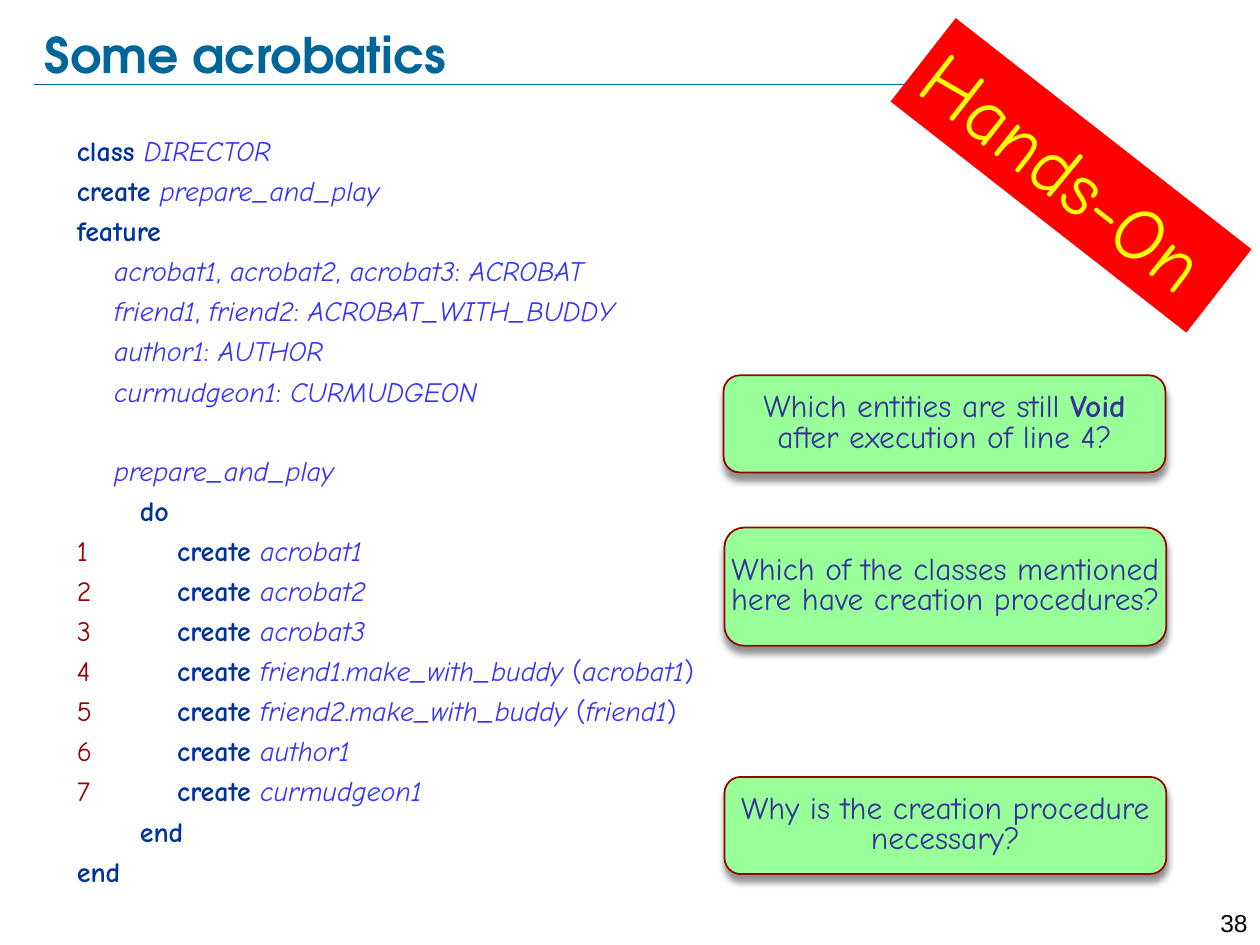
from dataclasses import dataclass
from itertools import groupby

from lxml.etree import SubElement as Sub
from pptx import Presentation
from pptx.dml.color import RGBColor as Rgb
from pptx.enum.shapes import MSO_CONNECTOR as Link, MSO_SHAPE as Form
from pptx.enum.text import MSO_ANCHOR as Anchor, MSO_AUTO_SIZE as Fit, PP_ALIGN as Align
from pptx.oxml.ns import qn
from pptx.util import Pt


@dataclass(frozen=True)
class Theme:
    head: str = "TeX Gyre Adventor"
    body: str = "Comic Neue"
    page: str = "Arial"
    teal: str = "006699"
    key: str = "003399"
    name: str = "3333FF"
    wine: str = "990000"
    mint: str = "99FF99"
    ink: str = "333399"
    red: str = "FF0000"
    gold: str = "FFFF00"
    black: str = "000000"
    title: int = 28
    code: int = 16
    note: int = 18
    sign: int = 44
    foot: int = 14


LOOK = Theme()
KEYS = {"class", "create", "feature", "do", "end"}
CODE = """class DIRECTOR
create prepare_and_play
feature
    acrobat1, acrobat2, acrobat3: ACROBAT
    friend1, friend2: ACROBAT_WITH_BUDDY
    author1: AUTHOR
    curmudgeon1: CURMUDGEON

    prepare_and_play
\tdo
1\t    create acrobat1
2\t    create acrobat2
3\t    create acrobat3
4\t    create friend1.make_with_buddy (acrobat1)
5\t    create friend2.make_with_buddy (friend1)
6\t    create author1
7\t    create curmudgeon1
\tend
end"""
NOTES = [
    ("Which entities are still Void after execution of line 4?", (413.5, 214.5, 252.5, 55.5)),
    ("Which of the classes mentioned here have creation procedures?", (414, 301.5, 252.5, 67.5)),
    ("Why is the creation procedure necessary?", (414, 444, 252.5, 55.5)),
]


def place(shape, box):
    shape.left, shape.top, shape.width, shape.height = map(Pt, box)


def style(run, face, size, tint, bold=False, slant=False):
    font = run.font
    font.name, font.size = face, Pt(size)
    font.bold, font.italic = bold, slant
    font.color.rgb = Rgb.from_string(tint)


def inset(frame, x, y):
    frame.margin_left = frame.margin_right = Pt(x)
    frame.margin_top = frame.margin_bottom = Pt(y)


def paint(shape, tint):
    shape.fill.solid()
    shape.fill.fore_color.rgb = Rgb.from_string(tint)
    shape.shadow.inherit = False


def add_head(slide, box):
    x, y, w, h = box
    line = slide.shapes.add_connector(
        Link.STRAIGHT, Pt(x - 6), Pt(y + h), Pt(x + 561.5), Pt(y + h))
    line.line.color.rgb = Rgb.from_string(LOOK.teal)
    line.line.width = Pt(0.25)
    Sub(line._element.spPr, qn("a:effectLst"))
    title = slide.shapes.title
    place(title, box)
    frame = title.text_frame
    inset(frame, 0, 0)
    frame.auto_size = Fit.NONE
    frame.vertical_anchor = Anchor.MIDDLE
    frame.text = "Some acrobatics"
    para = frame.paragraphs[0]
    para.alignment = Align.LEFT
    style(para.runs[0], LOOK.head, LOOK.title, LOOK.teal, bold=True)


def add_code(slide, box):
    body = slide.placeholders[1]
    place(body, box)
    frame = body.text_frame
    frame.auto_size = Fit.NONE
    gap, pitch = 3.7, 22.4
    space = 0
    para = frame.paragraphs[0]
    for row, line in enumerate(CODE.split("\n")):
        if not line:
            space += pitch
            continue
        if row:
            para = frame.add_paragraph()
        props = para._p.get_or_add_pPr()
        props.set("marL", "0")
        props.set("indent", "0")
        Sub(props, qn("a:buNone"))
        para.space_before = Pt(space)
        space = gap
        for word, chars in groupby(line, lambda c: c.isalnum() or c == "_"):
            run = para.add_run()
            run.text = text = "".join(chars)
            key, digit = text in KEYS, text.isdigit()
            tint = LOOK.key if key else LOOK.wine if digit else LOOK.name
            style(run, LOOK.body, LOOK.code, tint, key, word and not key and not digit)


def add_sign(slide, box):
    sign = slide.shapes.add_shape(Form.RECTANGLE, *map(Pt, box))
    paint(sign, LOOK.red)
    sign.line.fill.background()
    sign.rotation = 38
    frame = sign.text_frame
    inset(frame, 7.2, 3.6)
    frame.word_wrap = False
    frame.auto_size = Fit.SHAPE_TO_FIT_TEXT
    frame.vertical_anchor = Anchor.TOP
    frame.text = "Hands-On"
    para = frame.paragraphs[0]
    para.alignment = Align.LEFT
    style(para.runs[0], LOOK.body, LOOK.sign, LOOK.gold)


def add_note(slide, text, box):
    note = slide.shapes.add_shape(Form.ROUNDED_RECTANGLE, *map(Pt, box))
    note.line.color.rgb = Rgb.from_string(LOOK.wine)
    note.line.width = Pt(1)
    paint(note, LOOK.mint)
    glow = Sub(note._element.spPr.find(qn("a:effectLst")), qn("a:outerShdw"),
               blurRad=str(Pt(4)), dist=str(Pt(4)), dir="5400000", rotWithShape="0")
    tint = Sub(glow, qn("a:srgbClr"), val=LOOK.black)
    Sub(tint, qn("a:alpha"), val="43000")
    frame = note.text_frame
    inset(frame, 0, 3.6)
    frame.word_wrap = True
    frame.vertical_anchor = Anchor.MIDDLE
    para = frame.paragraphs[0]
    para.alignment = Align.CENTER
    para.line_spacing = 0.8
    for part in filter(None, text.partition("Void")):
        run = para.add_run()
        run.text = part
        style(run, LOOK.body, LOOK.note, LOOK.ink, bold=part == "Void")


def add_foot(slide, box):
    frame = slide.shapes.add_textbox(*map(Pt, box)).text_frame
    frame.word_wrap = True
    frame.text = "38"
    para = frame.paragraphs[0]
    para.alignment = Align.RIGHT
    style(para.runs[0], LOOK.page, LOOK.foot, LOOK.black)


def main():
    deck = Presentation()
    deck.slide_width, deck.slide_height = Pt(720), Pt(540)
    slide = deck.slides.add_slide(deck.slide_layouts[1])
    add_head(slide, (25.5, 13.5, 626, 34.5))
    add_code(slide, (36.75, 72.75, 663, 439))
    add_sign(slide, (504.75, 70, 214.5, 60.5))
    for text, box in NOTES:
        add_note(slide, text, box)
    add_foot(slide, (680.5, 515.5, 39.5, 17.5))
    deck.save("out.pptx")


if __name__ == "__main__":
    main()
